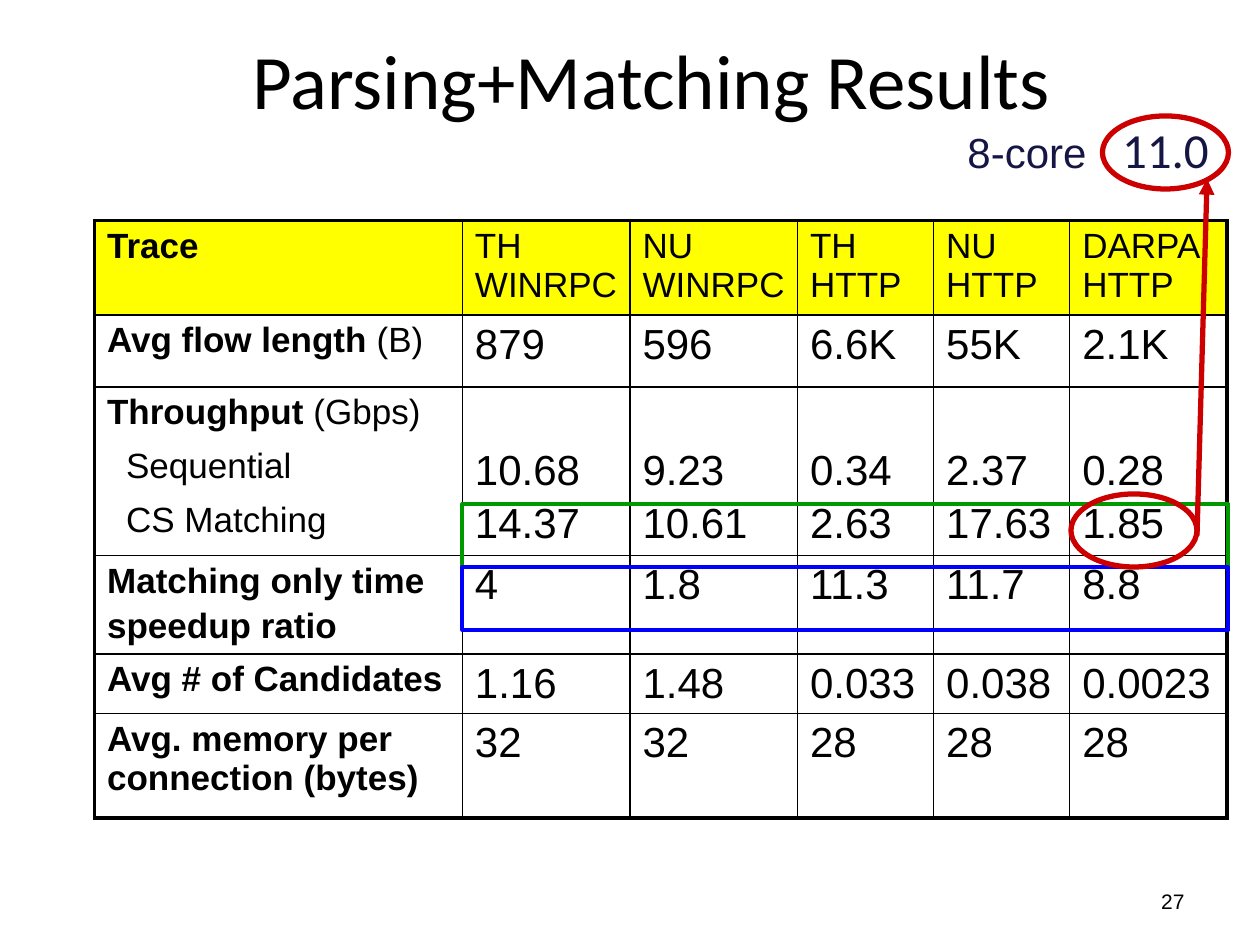
import pptx
import pptx.chart.data
import pptx.dml.color
import pptx.enum.shapes
import pptx.enum.text
import pptx.oxml
import pptx.oxml.ns
import pptx.util
from dataclasses import dataclass
from lxml import etree

Inches = pptx.util.Inches
Pt = pptx.util.Pt
Shape = pptx.enum.shapes.MSO_SHAPE
Align = pptx.enum.text.PP_ALIGN
Anchor = pptx.enum.text.MSO_ANCHOR


@dataclass(frozen=True)
class Theme:
    heading_font: str = "Calibri"
    body_font: str = "Arial"
    black: str = "000000"
    navy: str = "161645"
    yellow: str = "FFFF00"
    green: str = "009900"
    blue: str = "0000FF"
    red: str = "CC0000"
    title_size: float = 44
    callout_size: float = 28
    value_size: float = 24
    label_size: float = 20
    number_size: float = 12
    thin: float = 1
    medium: float = 2.25
    thick: float = 3
    gap: float = 3.5
    wide_gap: float = 8.5


def rgb(color):
    return pptx.dml.color.RGBColor.from_string(color)


def sub_element(parent, tag, **attributes):
    return etree.SubElement(parent, pptx.oxml.ns.qn(tag), **attributes)


class SlideBuilder:
    """Draws themed elements on one slide."""

    def __init__(self, slide, theme):
        self.slide = slide
        self.theme = theme

    def format_runs(self, paragraph, size, font=None, color=None, bold=False):
        for run in paragraph.runs:
            run.font.size = Pt(size)
            run.font.name = font or self.theme.body_font
            run.font.color.rgb = rgb(color or self.theme.black)
            run.font.bold = bold

    def title(self, text, left, top, width, height):
        shape = self.slide.shapes.title
        shape.left, shape.top = Inches(left), Inches(top)
        shape.width, shape.height = Inches(width), Inches(height)
        frame = shape.text_frame
        frame.text = text
        frame.vertical_anchor = Anchor.MIDDLE
        frame.paragraphs[0].alignment = Align.CENTER
        self.format_runs(frame.paragraphs[0], self.theme.title_size, self.theme.heading_font)

    def text_box(self, text, left, top, width, height, size, color,
                 alignment=Align.LEFT, anchor=Anchor.TOP, line_spacing=1.0):
        shape = self.slide.shapes.add_textbox(
            Inches(left), Inches(top), Inches(width), Inches(height))
        frame = shape.text_frame
        frame.word_wrap = True
        frame.vertical_anchor = anchor
        frame.text = text
        paragraph = frame.paragraphs[0]
        paragraph.alignment = alignment
        paragraph.line_spacing = line_spacing
        self.format_runs(paragraph, size, color=color)

    def outline(self, kind, left, top, width, height, color, weight, text=None):
        shape = self.slide.shapes.add_shape(
            kind, Inches(left), Inches(top), Inches(width), Inches(height))
        shape.shadow.inherit = False
        shape.fill.background()
        shape.line.color.rgb = rgb(color)
        shape.line.width = Pt(weight)
        if text:
            frame = shape.text_frame
            frame.text = text
            frame.word_wrap = False
            frame.vertical_anchor = Anchor.MIDDLE
            paragraph = frame.paragraphs[0]
            paragraph.alignment = Align.CENTER
            paragraph.line_spacing = 0.9
            self.format_runs(paragraph, self.theme.callout_size,
                             self.theme.heading_font, self.theme.navy)

    def arrow(self, start, end, color, weight):
        connector = self.slide.shapes.add_connector(
            pptx.enum.shapes.MSO_CONNECTOR.STRAIGHT,
            *(Inches(value) for value in (*start, *end)))
        connector.line.color.rgb = rgb(color)
        connector.line.width = Pt(weight)
        sub_element(connector.line._get_or_add_ln(), "a:tailEnd", type="triangle")
        sub_element(connector._element.spPr, "a:effectLst")

    def cell_borders(self, cell, weights):
        properties = cell._tc.get_or_add_tcPr()
        for index, (side, weight) in enumerate(weights.items()):
            line = sub_element(properties, f"a:ln{side}", w=str(Pt(weight)))
            sub_element(sub_element(line, "a:solidFill"), "a:srgbClr", val=self.theme.black)
            properties.insert(index, line)

    def cell_text(self, cell, paragraphs, size, gap, indent=0):
        frame = cell.text_frame
        frame.text = "\n".join(bold + plain for bold, plain in paragraphs)
        for index, (paragraph, (bold, plain)) in enumerate(zip(frame.paragraphs, paragraphs)):
            paragraph.text = bold or plain
            if bold and plain:
                paragraph.add_run().text = plain
            self.format_runs(paragraph, size)
            paragraph.runs[0].font.bold = bool(bold)
            if index:
                paragraph.space_before = Pt(gap)
                paragraph._p.get_or_add_pPr().set("marL", str(Inches(indent)))

    def table(self, rows, left, top, widths, heights):
        theme = self.theme
        table = self.slide.shapes.add_table(
            len(rows), len(widths), Inches(left), Inches(top),
            Inches(sum(widths)), Inches(sum(heights))).table
        table.first_row = table.horz_banding = False
        for column, width in zip(table.columns, widths):
            column.width = Inches(width)
        last_row, last_column = len(rows) - 1, len(widths) - 1
        for r, (label, values) in enumerate(rows):
            table.rows[r].height = Inches(heights[r])
            nested = len(label) == 3
            for c in range(len(widths)):
                cell = table.cell(r, c)
                if c == 0:
                    self.cell_text(cell, label, theme.label_size,
                                   theme.wide_gap if nested else theme.gap,
                                   0.15 if nested else 0)
                else:
                    lines = [("", line) for line in values[c - 1].split("\n")]
                    self.cell_text(cell, lines, theme.value_size if r else theme.label_size,
                                   theme.gap)
                    if nested:
                        cell.margin_top = Inches(0.48)
                if r == 0:
                    cell.fill.solid()
                    cell.fill.fore_color.rgb = rgb(theme.yellow)
                else:
                    cell.fill.background()
                outer = {"L": c == 0, "R": c == last_column, "T": r == 0, "B": r == last_row}
                self.cell_borders(cell, {side: theme.medium if edge else theme.thin
                                         for side, edge in outer.items()})


ROWS = [
    ([("Trace", "")], ["TH WINRPC", "NU WINRPC", "TH HTTP", "NU HTTP", "DARPA HTTP"]),
    ([("Avg flow length ", "(B)")], ["879", "596", "6.6K", "55K", "2.1K"]),
    ([("Throughput", " (Gbps)"), ("", "Sequential"), ("", "CS Matching")],
     ["10.68\n14.37", "9.23\n10.61", "0.34\n2.63", "2.37\n17.63", "0.28\n1.85"]),
    ([("Matching only time", ""), ("speedup ratio", "")], ["4", "1.8", "11.3", "11.7", "8.8"]),
    ([("Avg # of Candidates", "")], ["1.16", "1.48", "0.033", "0.038", "0.0023"]),
    ([("Avg. memory per connection (bytes)", "")], ["32", "32", "28", "28", "28"]),
]


def main():
    presentation = pptx.Presentation()
    presentation.slide_width, presentation.slide_height = Inches(10), Inches(7.5)
    slide = presentation.slides.add_slide(presentation.slide_layouts[5])
    theme = Theme()
    builder = SlideBuilder(slide, theme)
    builder.title("Parsing+Matching Results", 0.67, 0, 9, 1.25)
    builder.table(ROWS, 0.75, 1.75, [2.92, 1.33, 1.33, 1.08, 1.08, 1.25],
                  [0.75, 0.57, 1.34, 0.78, 0.46, 0.83])
    for top, color in ((4, theme.green), (4.5, theme.blue)):
        builder.outline(Shape.RECTANGLE, 3.67, top, 6.08, 0.5, color, theme.medium)
    for left, top, text in ((8.5, 3.92, None), (8.75, 0.92, "11.0")):
        builder.outline(Shape.OVAL, left, top, 1, 0.58, theme.red, theme.thick, text)
    builder.arrow((9.5, 4.25), (9.58, 1.42), theme.red, theme.thick)
    builder.text_box("8-core", 7.58, 1, 1.42, 0.46, theme.value_size, theme.navy,
                     line_spacing=0.9)
    builder.text_box("27", 7.17, 6.95, 2.33, 0.4, theme.number_size, theme.black,
                     Align.RIGHT, Anchor.MIDDLE)
    presentation.save("out.pptx")


if __name__ == "__main__":
    main()
